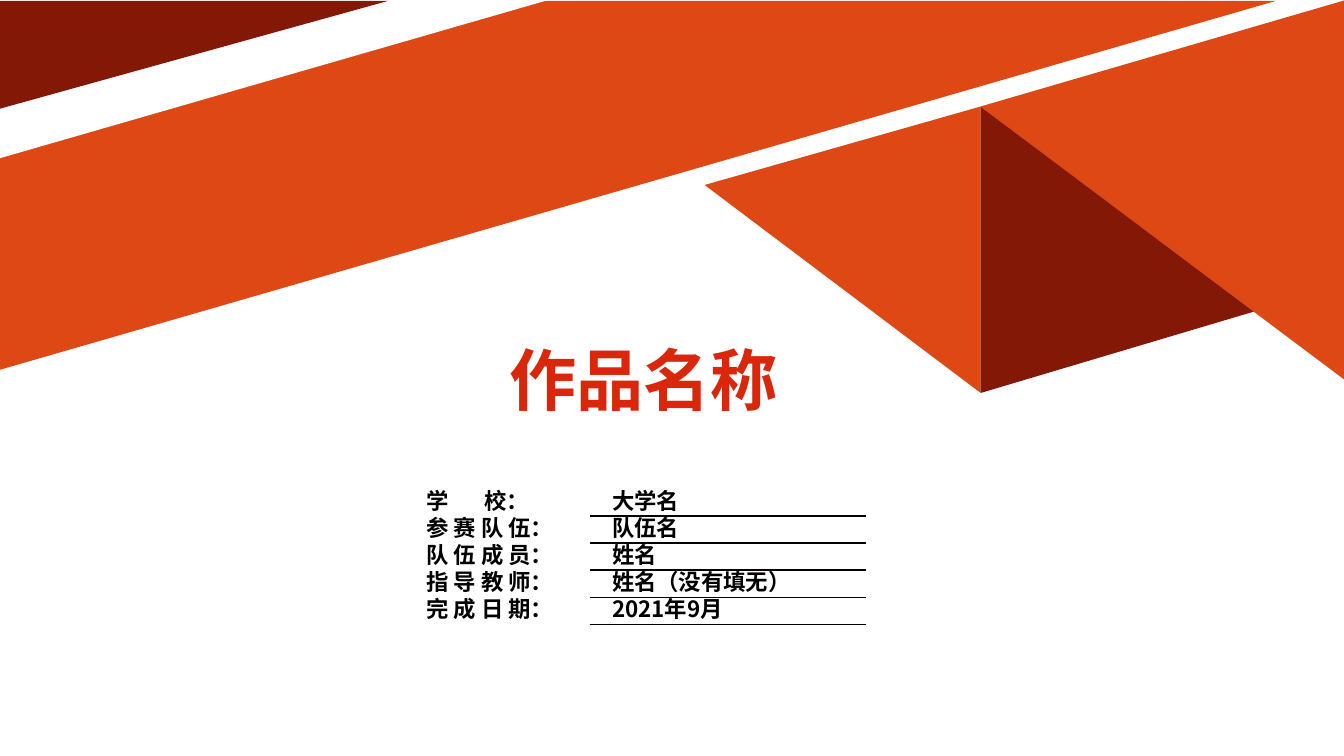
from lxml import etree
from pptx import Presentation
from pptx.dml.color import RGBColor
from pptx.enum.shapes import MSO_SHAPE
from pptx.enum.text import MSO_ANCHOR, PP_ALIGN
from pptx.oxml.ns import qn
from pptx.util import Pt

TRI = MSO_SHAPE.ISOSCELES_TRIANGLE
CORNER = MSO_SHAPE.RIGHT_TRIANGLE
RIGHT = PP_ALIGN.RIGHT
MIDDLE, BOTTOM = MSO_ANCHOR.MIDDLE, MSO_ANCHOR.BOTTOM

FONT = "Noto Sans CJK SC"
ORANGE, MAROON, WHITE = "DD4814", "831806", "FFFFFF"
RED, BLACK, RULE = "D8270A", "000000", "080000"
PLAIN = "{2D5ABB26-0587-4C30-8999-92F81FD0307C}"

TITLE = "作品名称"
ROWS = [
    ("学\t校：", "大学名"),
    ("参 赛 队 伍：", "队伍名"),
    ("队 伍 成 员：", "姓名"),
    ("指 导 教 师：", "姓名（没有填无）"),
    ("完 成 日 期：", "2021年9月"),
]
FOLDS = [
    (TRI, (499.6, 79.8, 204.6, 197.2), 270, True, 0.274, ORANGE),
    (TRI, (696.8, 79.8, 204.6, 197.2), 90, False, 0.713, MAROON),
    (TRI, (694.8, 5.8, 270.6, 259.8), 270, True, 0.28, ORANGE),
    (CORNER, (0, 0.6, 911.5, 263.5), 180, True, None, ORANGE),
    (CORNER, (0, 0, 391.7, 113), 180, True, None, WHITE),
    (CORNER, (0, 0.6, 277.2, 77), 180, True, None, MAROON),
]
LEFT, TOP, STEP = 299.5, 349.2, 19.3
COLS = (121.7, 197.3)
TAB, INDENT = 41.5, 16


def color(text):
    return RGBColor.from_string(text)


def style(obj, values):
    for name, value in values.items():
        setattr(obj, name, value)


def write(frame, text, size, ink):
    para = frame.paragraphs[0]
    run = para.add_run()
    run.text = text
    style(run.font, {"size": Pt(size), "bold": True, "name": FONT})
    run.font.color.rgb = color(ink)
    east = etree.SubElement(run.font._element, qn("a:ea"))
    east.set("typeface", FONT)
    return para


def fold(slide, kind, box, turn, flip, peak, hue):
    shape = slide.shapes.add_shape(kind, *map(Pt, box))
    shape.rotation = turn
    if flip:
        shape._element.spPr.xfrm.set("flipH", "1")
    if peak:
        shape.adjustments[0] = peak
    shape.shadow.inherit = False
    shape.fill.solid()
    shape.fill.fore_color.rgb = color(hue)
    shape.line.fill.background()


def edge(cell, side):
    props = cell._tc.get_or_add_tcPr()
    line = etree.Element(qn("a:" + side), w=str(Pt(1)))
    fill = etree.SubElement(line, qn("a:solidFill"))
    etree.SubElement(fill, qn("a:srgbClr"), val=RULE)
    props.append(line)


def head(slide):
    title = slide.shapes.title
    style(title, {"left": Pt(356.4), "top": Pt(237.6),
                  "width": Pt(206.6), "height": Pt(65.5)})
    frame = title.text_frame
    style(frame, {"word_wrap": False, "vertical_anchor": MIDDLE})
    write(frame, TITLE, 48, RED).alignment = RIGHT


def form(slide):
    size = (LEFT, TOP, sum(COLS), STEP * len(ROWS))
    table = slide.shapes.add_table(len(ROWS), 2, *map(Pt, size)).table
    style(table, {"first_row": False, "horz_banding": False})
    table._tbl.tblPr.find(qn("a:tableStyleId")).text = PLAIN
    for col, width in zip(table.columns, COLS):
        col.width = Pt(width)
    for r, row in enumerate(ROWS):
        table.rows[r].height = Pt(STEP)
        for c, text in enumerate(row):
            cell = table.cell(r, c)
            style(cell, {"margin_left": Pt(INDENT if c else 5),
                         "margin_right": Pt(5),
                         "margin_top": 0, "margin_bottom": 0})
            para = write(cell.text_frame, text, 16, BLACK)
            para.line_spacing = Pt(STEP)
            if c:
                cell.vertical_anchor = BOTTOM
                if r:
                    edge(cell, "lnT")
                edge(cell, "lnB")
            elif "\t" in text:
                tabs = etree.SubElement(para._p.get_or_add_pPr(), qn("a:tabLst"))
                etree.SubElement(tabs, qn("a:tab"), pos=str(Pt(TAB)), algn="l")
            cell.fill.background()


def main():
    deck = Presentation()
    style(deck, {"slide_width": Pt(960), "slide_height": Pt(540)})
    slide = deck.slides.add_slide(deck.slide_layouts[5])
    for item in FOLDS:
        fold(slide, *item)
    head(slide)
    form(slide)
    deck.save("out.pptx")


if __name__ == "__main__":
    main()
